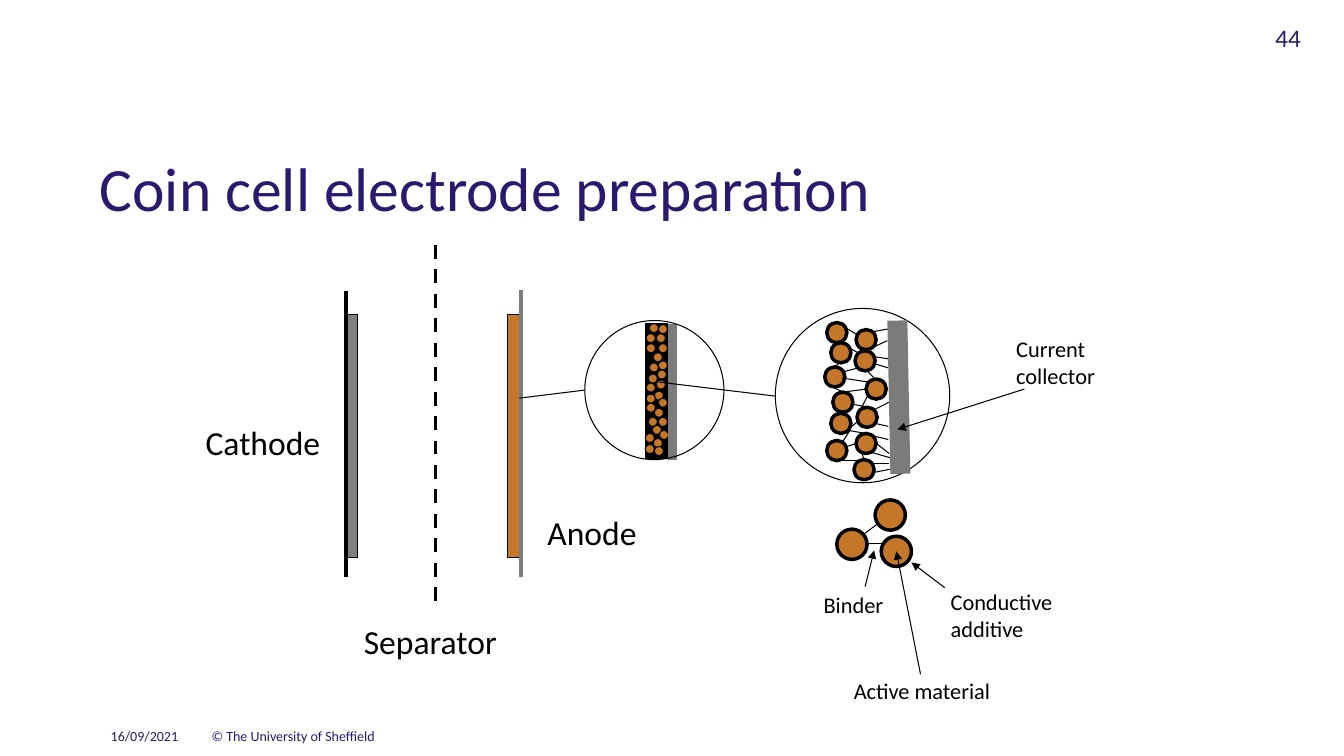
from pptx import Presentation
from pptx.dml.color import RGBColor
from pptx.enum.dml import MSO_LINE
from pptx.enum.shapes import MSO_CONNECTOR, MSO_SHAPE
from pptx.enum.text import MSO_ANCHOR, PP_ALIGN
from pptx.oxml.ns import qn
from pptx.util import Inches, Pt
from lxml.etree import SubElement

NAVY, BLACK, COPPER = "2A196F", "000000", "C57729"
CATHODE_GREY, COLLECTOR_GREY = "808080", "7B7B7B"
THIN, THICK = 0.75, 2.5

# Text: wording, (left, top, width, height), size
TITLE = ("Coin cell electrode preparation", (0.89, 1.5, 12, 0.83), 44)
PAGE_NUMBER = ("44", (10.22, 0.17, 2.78, 0.5), 18)
FOOTERS = [
    ("16/09/2021", (1, 7.17, 1.33, 0.33), 10),
    ("© The University of Sheffield", (2, 7.17, 7.56, 0.33), 10),
]
LABELS = [
    ("Anode", (5.33, 5.03, 1.18, 0.5), 24),
    ("Cathode", (1.94, 4.14, 1.35, 0.5), 24),
    ("Separator", (3.51, 6.11, 1.62, 0.5), 24),
    ("Binder", (8.07, 5.82, 0.85, 0.37), 16),
    ("Conductive additive", (9.33, 5.79, 1.32, 0.64), 16),
    ("Active material", (8.37, 6.67, 1.76, 0.37), 16),
    ("Current collector", (9.98, 3.28, 1.32, 0.64), 16),
]

# Electrode plates share one top and size
PLATE_TOP, PLATE_WIDTH, PLATE_HEIGHT = 3.12, 0.12, 2.41
CATHODE_LEFT, ANODE_LEFT = 3.43, 5.03

# Particles: left and top corners for each diameter
COATING_DOT, PARTICLE, LARGE_PARTICLE = 0.09, 0.2, 0.3
COATING_DOTS = [
    (6.51, 3.31), (6.53, 3.41), (6.48, 3.5), (6.53, 3.58), (6.52, 3.67),
    (6.51, 3.77), (6.49, 3.88), (6.53, 3.95), (6.49, 4.05), (6.53, 4.14),
    (6.47, 4.22), (6.48, 4.35), (6.43, 4.14), (6.41, 4), (6.41, 3.8),
    (6.43, 3.71), (6.44, 3.6), (6.41, 3.41), (6.4, 4.3), (6.4, 4.41),
    (6.49, 4.43), (6.54, 4.27), (6.41, 3.31), (6.44, 3.21), (6.53, 3.22),
    (6.41, 3.91),
]
PARTICLES = [
    (8.48, 3.48), (8.2, 4.37), (8.18, 3.64), (8.59, 3.76), (8.26, 3.89),
    (8.5, 4.04), (8.24, 4.1), (8.49, 4.3), (8.24, 3.4), (8.49, 3.27),
    (8.2, 3.2), (8.47, 4.56),
]
LARGE_PARTICLES = [(8.3, 5.25), (8.68, 4.96), (8.74, 5.32)]

# Lines: from x, from y, to x, to y
BINDER_LINKS = [
    (8.4, 3.26, 8.5, 3.32), (8.42, 3.45, 8.53, 3.51), (8.36, 3.69, 8.51, 3.65),
    (8.36, 3.89, 8.59, 3.86), (8.53, 4.07, 8.61, 3.92), (8.36, 4.38, 8.43, 4.27),
    (8.4, 4.43, 8.49, 4.4), (8.4, 4.27, 8.52, 4.17), (8.41, 4.27, 8.59, 4.3),
    (8.45, 4.01, 8.62, 4.04), (8.35, 3.75, 8.61, 3.79), (8.68, 3.61, 8.81, 3.65),
    (8.67, 3.44, 8.8, 3.38), (8.68, 3.54, 8.81, 3.56), (8.68, 4.2, 8.81, 4.23),
    (8.68, 4.33, 8.81, 4.36), (8.61, 3.69, 8.68, 3.76), (8.66, 3.29, 8.83, 3.26),
    (8.65, 4.49, 8.86, 4.55), (8.68, 4.39, 8.82, 4.5), (8.26, 3.84, 8.36, 3.89),
    (8.28, 3.64, 8.34, 3.59), (8.66, 4.07, 8.82, 3.99), (8.65, 4.6, 8.82, 4.6),
    (8.35, 4.57, 8.52, 4.57), (8.55, 4.5, 8.57, 4.56), (8.65, 4.69, 8.91, 4.64),
]
LARGE_LINKS = [(8.6, 5.39, 8.77, 5.39), (8.58, 5.29, 8.74, 5.17)]
ZOOM_LINES = [(6.53, 3.79, 7.69, 3.93), (5.15, 3.95, 5.8, 3.87)]
LABEL_ARROWS = [
    (8.67, 5.46, 8.58, 5.82), (9.04, 5.58, 9.37, 5.83),
    (8.89, 5.47, 9.13, 6.69), (8.9, 4.26, 10.16, 3.86),
]

presentation = Presentation()
presentation.slide_width, presentation.slide_height = Inches(13.33), Inches(7.5)
slide = presentation.slides.add_slide(presentation.slide_layouts[6])


def color(value):
    return RGBColor.from_string(value)


def add_text(wording, box, size, font_color=BLACK):
    frame = slide.shapes.add_textbox(*map(Inches, box)).text_frame
    frame.word_wrap = True
    paragraph = frame.paragraphs[0]
    paragraph.text = wording
    paragraph.font.name = "Calibri"
    paragraph.font.size = Pt(size)
    paragraph.font.color.rgb = color(font_color)
    return frame


def add_outlined(kind, box, fill=None, width=THIN):
    shape = slide.shapes.add_shape(kind, *map(Inches, box))
    shape.shadow.inherit = False
    if fill:
        shape.fill.solid()
        shape.fill.fore_color.rgb = color(fill)
    else:
        shape.fill.background()
    shape.line.color.rgb = color(BLACK)
    shape.line.width = Pt(width)


def add_particles(corners, diameter, width):
    for left, top in corners:
        add_outlined(MSO_SHAPE.OVAL, (left, top, diameter, diameter), COPPER, width)


def add_line(ends, line_color=BLACK, width=THIN, dash=None, arrow=False):
    connector = slide.shapes.add_connector(MSO_CONNECTOR.STRAIGHT, *map(Inches, ends))
    connector.line.color.rgb = color(line_color)
    connector.line.width = Pt(width)
    if dash:
        connector.line.dash_style = dash
    if arrow:
        SubElement(connector.line._get_or_add_ln(), qn("a:headEnd"), type="triangle")
    SubElement(connector._element.spPr, qn("a:effectLst"))


def add_lines(lines, arrow=False):
    for ends in lines:
        add_line(ends, arrow=arrow)


# Title, page number and footer
add_text(*TITLE, NAVY).vertical_anchor = MSO_ANCHOR.MIDDLE
slide.shapes[0].text_frame.paragraphs[0].line_spacing = 0.83
add_text(*PAGE_NUMBER, NAVY).paragraphs[0].alignment = PP_ALIGN.RIGHT
for footer in FOOTERS:
    add_text(*footer, NAVY)

# Cathode, separator and anode
for left, fill in ((CATHODE_LEFT, CATHODE_GREY), (ANODE_LEFT, COPPER)):
    add_outlined(MSO_SHAPE.RECTANGLE, (left, PLATE_TOP, PLATE_WIDTH, PLATE_HEIGHT), fill)
add_line((3.43, 2.89, 3.43, 5.72), width=THICK)
add_line((4.32, 2.43, 4.32, 6.05), width=THICK, dash=MSO_LINE.DASH)
add_line((5.17, 2.88, 5.17, 5.72), COLLECTOR_GREY, THICK)

# First zoom: coating on the collector
add_outlined(MSO_SHAPE.RECTANGLE, (6.4, 3.21, 0.22, 1.34), BLACK)
add_particles(COATING_DOTS, COATING_DOT, THIN)
add_line((6.67, 3.21, 6.67, 4.56), COLLECTOR_GREY, 6.5)
add_outlined(MSO_SHAPE.OVAL, (5.8, 3.18, 1.38, 1.38))

# Second zoom: particles joined by binder
add_particles(PARTICLES, PARTICLE, THICK)
add_lines(BINDER_LINKS)
add_outlined(MSO_SHAPE.OVAL, (7.69, 3.06, 1.73, 1.73))
add_lines(ZOOM_LINES)
add_line((8.9, 3.18, 8.93, 4.7), COLLECTOR_GREY, 14.25)

# Enlarged particles, arrows and labels
add_lines(LARGE_LINKS)
add_particles(LARGE_PARTICLES, LARGE_PARTICLE, THICK)
add_lines(LABEL_ARROWS, arrow=True)
for label in LABELS:
    add_text(*label)

presentation.save("out.pptx")
